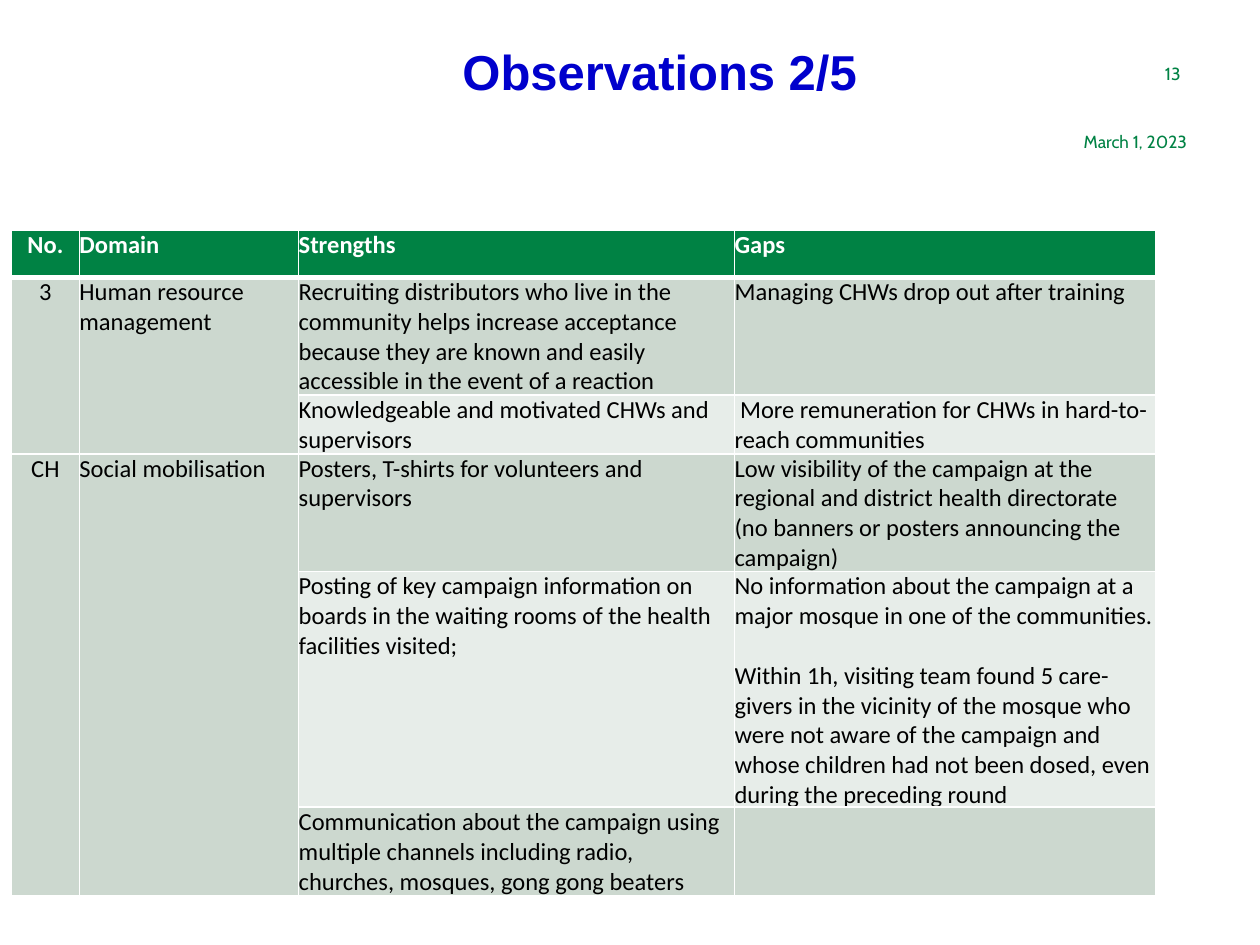
import pptx
import pptx.dml.color
import pptx.enum.text
import pptx.util
from lxml import etree
from pptx.oxml.ns import qn

Pt = pptx.util.Pt
RGBColor = pptx.dml.color.RGBColor
ALIGN = pptx.enum.text.PP_ALIGN

GREEN = RGBColor(0x00, 0x82, 0x44)
BLUE = RGBColor(0x00, 0x00, 0xCC)
WHITE = RGBColor(0xFF, 0xFF, 0xFF)
BLACK = RGBColor(0x00, 0x00, 0x00)
DARK_BAND = RGBColor(0xCC, 0xD8, 0xCF)
LIGHT_BAND = RGBColor(0xE7, 0xED, 0xE9)

COLUMN_WIDTHS = [38.9, 125.3, 249.1, 240.5]
ROW_HEIGHTS = [26.6, 43.2, 25.2, 43.2, 97.2, 32.4]
ROWS = [
    ["No.", "Domain", "Strengths", "Gaps"],
    ["3", "Human resource management",
     "Recruiting distributors who live in the community helps increase acceptance "
     "because they are known and easily accessible in the event of a reaction",
     "Managing CHWs drop out after training"],
    ["", "", "Knowledgeable and motivated CHWs and supervisors",
     " More remuneration for CHWs in hard-to-reach communities"],
    ["CH", "Social mobilisation", "Posters, T-shirts for volunteers and supervisors",
     "Low visibility of the campaign at the regional and district health directorate "
     "(no banners or posters announcing the campaign)"],
    ["", "",
     "Posting of key campaign information on boards in the waiting rooms of the "
     "health facilities visited;",
     "No information about the campaign at a major mosque in one of the communities.\n"
     "Within 1h, visiting team found 5 care-givers in the vicinity of the mosque who "
     "were not aware of the campaign and whose children had not been dosed, even "
     "during the preceding round"],
    ["", "",
     "Communication about the campaign using multiple channels including radio, "
     "churches, mosques, gong gong beaters", ""],
]
DOMAIN_SPANS = [(1, 2), (3, 5)]


class SlideBuilder:
    table_font = "Calibri"
    table_size = 14
    paragraph_gap = 17

    def __init__(self, slide):
        self.slide = slide

    def style(self, paragraph, font_name, size, color, bold=False, align=ALIGN.LEFT):
        paragraph.alignment = align
        font = paragraph.font
        for target in [font] + [run.font for run in paragraph.runs]:
            target.name = font_name
            target.size = Pt(size)
            target.bold = bold
            target.color.rgb = color

    def text(self, box, text, font_name, size, color, bold=False,
             align=ALIGN.RIGHT, margins=(0, 0), line_spacing=1.0):
        """Add a text box; margins are (horizontal, vertical)."""
        shape = self.slide.shapes.add_textbox(*map(Pt, box))
        frame = shape.text_frame
        frame.word_wrap = True
        frame.margin_left = frame.margin_right = Pt(margins[0])
        frame.margin_top = frame.margin_bottom = Pt(margins[1])
        frame.text = text
        paragraph = frame.paragraphs[0]
        paragraph.line_spacing = line_spacing
        self.style(paragraph, font_name, size, color, bold, align)

    def border(self, cell, side, width):
        properties = cell._tc.get_or_add_tcPr()
        line = etree.SubElement(properties, qn(f"a:ln{side}"), w=str(Pt(width)))
        fill = etree.SubElement(line, qn("a:solidFill"))
        etree.SubElement(fill, qn("a:srgbClr"), val=str(WHITE))

    def cell(self, cell, text, row, column):
        header = row == 0
        cell.margin_left = cell.margin_right = cell.margin_top = cell.margin_bottom = 0
        cell.text = text
        for index, paragraph in enumerate(cell.text_frame.paragraphs):
            if index:
                paragraph.space_before = Pt(self.paragraph_gap)
            self.style(paragraph, self.table_font, self.table_size,
                       WHITE if header else BLACK, header,
                       ALIGN.CENTER if column == 0 else ALIGN.LEFT)
        widths = {"L": 1, "R": 1, "T": 3 if row == 1 else 1, "B": 3 if header else 1}
        for side, width in widths.items():
            self.border(cell, side, width)
        cell.fill.solid()
        banded = DARK_BAND if row % 2 or column < 2 else LIGHT_BAND
        cell.fill.fore_color.rgb = GREEN if header else banded

    def table(self, left, top, height, column_widths, row_heights, rows, spans):
        """Add the table; spans are (first row, last row) merges in columns 0 and 1."""
        shape = self.slide.shapes.add_table(
            len(rows), len(column_widths), Pt(left), Pt(top),
            Pt(sum(column_widths)), Pt(height))
        table = shape.table
        for column, width in zip(table.columns, column_widths):
            column.width = Pt(width)
        for table_row, row_height in zip(table.rows, row_heights):
            table_row.height = Pt(row_height)
        shape.height = Pt(height)
        for row, texts in enumerate(rows):
            for column, text in enumerate(texts):
                self.cell(table.cell(row, column), text, row, column)
        for first, last in spans:
            for column in (0, 1):
                table.cell(first, column).merge(table.cell(last, column))


def main():
    presentation = pptx.Presentation()
    presentation.slide_width = Pt(720)
    presentation.slide_height = Pt(540)
    builder = SlideBuilder(presentation.slides.add_slide(presentation.slide_layouts[6]))
    builder.text((421.9, 36, 252.7, 12.2), "13", "Cabin", 10, GREEN)
    builder.text((425.5, 74.9, 252.7, 12.2), "March 1, 2023", "Cabin", 10, GREEN)
    builder.text((110.9, 23.8, 532.1, 63.4), "Observations 2/5", "Arial", 28, BLUE,
                 bold=True, align=ALIGN.CENTER, margins=(7.2, 3.6), line_spacing=0.9)
    builder.table(6.5, 131.8, 363.6, COLUMN_WIDTHS, ROW_HEIGHTS, ROWS, DOMAIN_SPANS)
    presentation.save("out.pptx")


if __name__ == "__main__":
    main()
